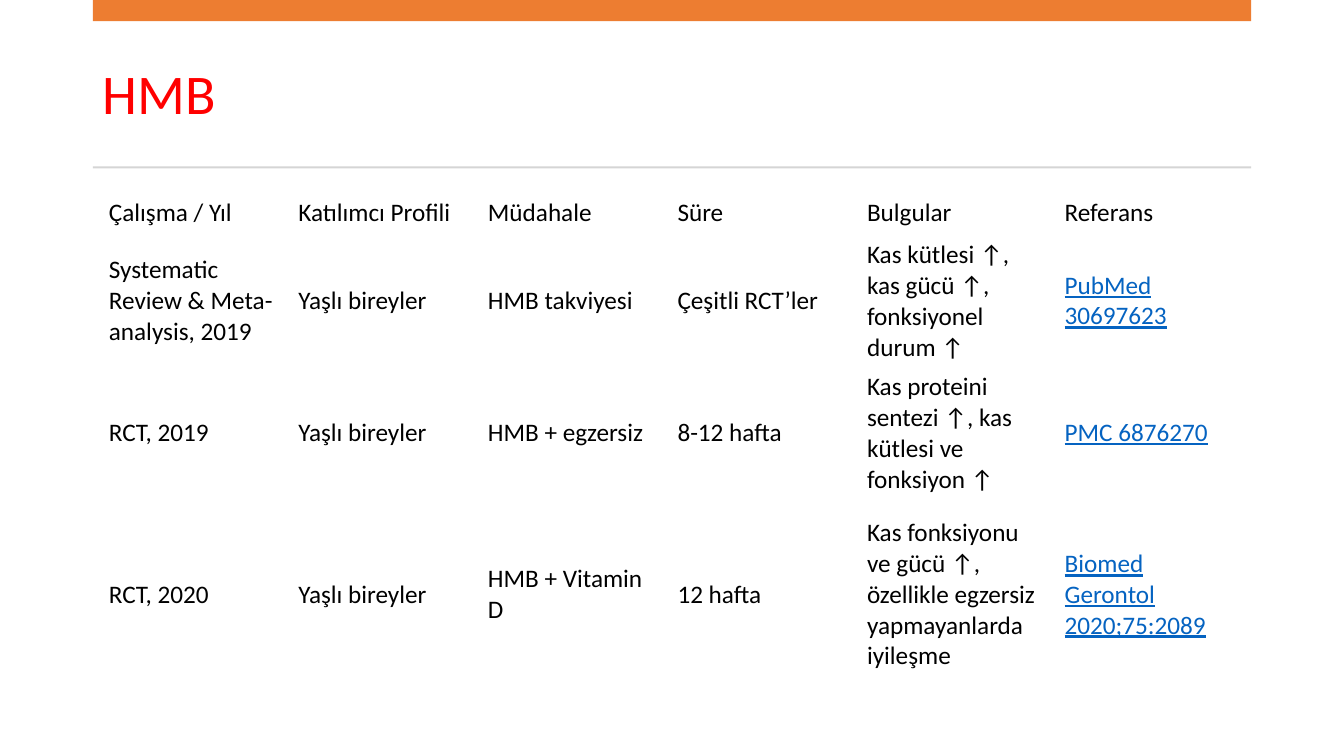
from pptx import Presentation
from pptx import util as u
from pptx.dml.color import RGBColor
from pptx.enum import shapes, text

PX = 9144
FONT = "Calibri"
BLACK, LINK = "000000", "0563C1"
COLS = [188, 188, 188, 188, 196, 188]
ROWS = [43, 131, 131, 190]
STUDIES = [
    ["Çalışma / Yıl", "Katılımcı Profili", "Müdahale", "Süre", "Bulgular", "Referans"],
    ["Systematic Review & Meta-analysis, 2019", "Yaşlı bireyler", "HMB takviyesi",
     "Çeşitli RCT’ler", "Kas kütlesi ↑, kas gücü ↑, fonksiyonel durum ↑",
     "PubMed 30697623"],
    ["RCT, 2019", "Yaşlı bireyler", "HMB + egzersiz", "8-12 hafta",
     "Kas proteini sentezi ↑, kas kütlesi ve fonksiyon ↑", "PMC 6876270"],
    ["RCT, 2020", "Yaşlı bireyler", "HMB + Vitamin D", "12 hafta",
     "Kas fonksiyonu ve gücü ↑, özellikle egzersiz yapmayanlarda iyileşme",
     "Biomed Gerontol 2020;75:2089"],
]


def px(*nums):
    """Turn px lengths into EMU."""
    return [u.Emu(n * PX) for n in nums]


def color(code):
    """Turn a hex string into a colour."""
    return RGBColor.from_string(code)


def style(para, size, code, under=False):
    """Format the runs of a paragraph."""
    for run in para.runs:
        font = run.font
        font.name, font.size = FONT, u.Pt(size)
        font.bold, font.underline = False, under
        font.color.rgb = color(code)


def add_bar(slide, box, code):
    """Add a plain filled bar."""
    bar = slide.shapes.add_shape(shapes.MSO_SHAPE.RECTANGLE, *px(*box))
    bar.shadow.inherit = False
    bar.fill.solid()
    bar.fill.fore_color.rgb = color(code)
    bar.line.fill.background()


def add_title(slide, box, words):
    """Add the slide heading."""
    frame = slide.shapes.add_textbox(*px(*box)).text_frame
    frame.word_wrap = True
    frame.vertical_anchor = text.MSO_ANCHOR.MIDDLE
    frame.text = words
    para = frame.paragraphs[0]
    para.line_spacing = 0.9
    style(para, 40, "FF0000")


def add_grid(slide, left, top):
    """Add the table of studies, with references shown as links."""
    box = px(left, top, sum(COLS), sum(ROWS))
    grid = slide.shapes.add_table(len(ROWS), len(COLS), *box).table
    grid.first_row = grid.horz_banding = False
    for col, width in zip(grid.columns, px(*COLS)):
        col.width = width
    for row, height in zip(grid.rows, px(*ROWS)):
        row.height = height
    for r, study in enumerate(STUDIES):
        for c, words in enumerate(study):
            cell = grid.cell(r, c)
            cell.fill.background()
            cell.vertical_anchor = text.MSO_ANCHOR.MIDDLE
            cell.text_frame.text = words
            link = r > 0 and c == len(COLS) - 1
            style(cell.text_frame.paragraphs[0], 18, LINK if link else BLACK, link)


def main():
    """Build and save the slide."""
    deck = Presentation()
    deck.slide_width, deck.slide_height = px(1333, 750)
    slide = deck.slides.add_slide(deck.slide_layouts[6])
    add_title(slide, (92, 37, 1149, 118), "HMB")
    add_bar(slide, (92, 0, 1149, 21), "ED7D31")
    add_bar(slide, (92, 165, 1149, 2), "D5D5D5")
    add_grid(slide, 98, 190)
    deck.save("out.pptx")


if __name__ == "__main__":
    main()
